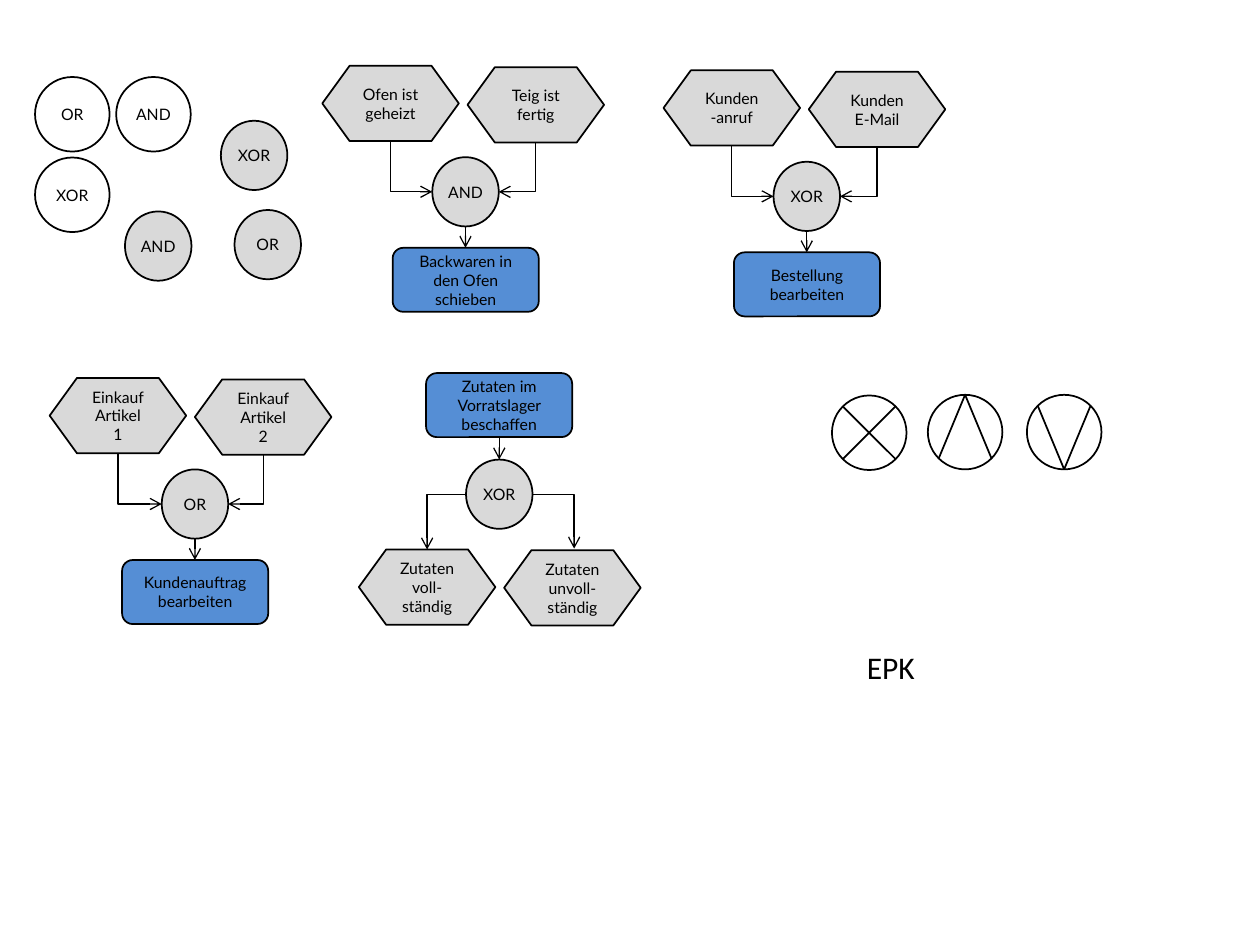
import pptx
import pptx.dml.color
import pptx.enum.shapes
import pptx.enum.text
import pptx.oxml
import pptx.oxml.ns
import pptx.util

Pt = pptx.util.Pt
RGB = pptx.dml.color.RGBColor
KIND = pptx.enum.shapes.MSO_SHAPE
LINK = pptx.enum.shapes.MSO_CONNECTOR
TEXT = pptx.enum.text

BLACK = RGB(0x00, 0x00, 0x00)
WHITE = RGB(0xFF, 0xFF, 0xFF)
GREY = RGB(0xD9, 0xD9, 0xD9)
BLUE = RGB(0x55, 0x8E, 0xD5)

HEX_W, HEX_H = 78, 43
TASK_W, TASK_H = 83.5, 36.6
GATE_W, GATE_H = 38, 39.6
RING = 42.6
ARM = 15.1

LABEL = {"name": "Lato", "size": Pt(9)}
TITLE = {"name": "Calibri", "size": Pt(18)}
PARA = {"alignment": TEXT.PP_ALIGN.CENTER, "space_after": Pt(10)}


def apply(item, form):
    for key, value in form.items():
        setattr(item, key, value)


def write(frame, text, font, para, wrap):
    apply(frame, {"word_wrap": wrap})
    line = frame.paragraphs[0]
    apply(line, para)
    run = line.add_run()
    run.text = text
    apply(run.font, font)
    run.font.color.rgb = BLACK


def node(slide, kind, left, top, width, height, fill, text="", wrap=True):
    shape = slide.shapes.add_shape(kind, Pt(left), Pt(top), Pt(width), Pt(height))
    shape.shadow.inherit = False
    shape.fill.solid()
    shape.fill.fore_color.rgb = fill
    shape.line.color.rgb = BLACK
    shape.line.width = Pt(1)
    if text:
        shape.text_frame.vertical_anchor = TEXT.MSO_ANCHOR.MIDDLE
        write(shape.text_frame, text, LABEL, PARA, wrap)


def event(slide, left, top, text):
    node(slide, KIND.FLOWCHART_PREPARATION, left, top, HEX_W, HEX_H, GREY, text)


def task(slide, left, top, text):
    node(slide, KIND.FLOWCHART_ALTERNATE_PROCESS, left, top, TASK_W, TASK_H, BLUE, text)


def gate(slide, left, top, text):
    node(slide, KIND.FLOWCHART_CONNECTOR, left, top, GATE_W, GATE_H, GREY, text, False)


def ring(slide, left, top, text=""):
    node(slide, KIND.FLOWCHART_CONNECTOR, left, top, RING, RING, WHITE, text, False)


def stroke(slide, start, end, width=1, kind=LINK.STRAIGHT):
    line = slide.shapes.add_connector(kind, *(Pt(n) for n in (*start, *end)))
    line.line.color.rgb = BLACK
    line.line.width = Pt(width)
    props = line._element.spPr
    props.append(pptx.oxml.parse_xml(
        "<a:effectLst %s/>" % pptx.oxml.ns.nsdecls("a")))
    return line


def arrow(slide, start, end, kind=LINK.STRAIGHT):
    line = stroke(slide, start, end, 0.75, kind)
    line.line._get_or_add_ln().append(pptx.oxml.parse_xml(
        '<a:tailEnd type="arrow" %s/>' % pptx.oxml.ns.nsdecls("a")))
    return line


def bend(slide, start, end, down=False):
    (x1, y1), (x2, y2) = start, end
    if down:
        mid_x, mid_y = (x1 + x2) / 2, (y1 + y2) / 2
        half_w, half_h = (y2 - y1) / 2, abs(x2 - x1) / 2
        side = 1 if x2 < x1 else -1
        start = mid_x - side * half_w, mid_y - half_h
        end = mid_x + side * half_w, mid_y + half_h
    line = arrow(slide, start, end, LINK.ELBOW)
    props = line._element.spPr
    props.prstGeom.set("prst", "bentConnector2")
    if down:
        props.xfrm.set("rot", str((90 if x2 < x1 else 270) * 60000))


def join(slide, left, top, first, second, rule, result, shift=0):
    next_x, next_y = left + 83, top + 0.8
    gate_x, gate_y = left + 62.8 + shift, top + 52.2
    task_x, task_y = left + 40.2 + shift, top + 104
    mid_x, mid_y = gate_x + GATE_W / 2, gate_y + GATE_H / 2
    event(slide, left, top, first)
    event(slide, next_x, next_y, second)
    bend(slide, (left + HEX_W / 2, top + HEX_H), (gate_x, mid_y), True)
    bend(slide, (next_x + HEX_W / 2, next_y + HEX_H), (gate_x + GATE_W, mid_y), True)
    gate(slide, gate_x, gate_y, rule)
    task(slide, task_x, task_y, result)
    arrow(slide, (mid_x, gate_y + GATE_H), (mid_x, task_y))


def split(slide, left, top, source, rule, first, second):
    gate_x, gate_y = left + 22.8, top + 49.4
    mid_x, mid_y = gate_x + GATE_W / 2, gate_y + GATE_H / 2
    event_x, event_y = left - 38.4, top + 100.8
    next_x = event_x + 83
    task(slide, left, top, source)
    gate(slide, gate_x, gate_y, rule)
    arrow(slide, (mid_x, top + TASK_H), (mid_x, gate_y))
    event(slide, event_x, event_y, first)
    event(slide, next_x, event_y + 0.4, second)
    bend(slide, (gate_x, mid_y), (event_x + HEX_W / 2, event_y))
    bend(slide, (gate_x + GATE_W, mid_y), (next_x + HEX_W / 2 + 1, event_y - 0.5))


def symbol(slide, left, top, marks):
    ring(slide, left, top)
    mid_x, mid_y = left + RING / 2, top + RING / 2
    for x1, y1, x2, y2 in marks:
        stroke(slide, (mid_x + x1, mid_y + y1), (mid_x + x2, mid_y + y2))


def main():
    deck = pptx.Presentation()
    apply(deck, {"slide_width": Pt(720), "slide_height": Pt(540)})
    slide = deck.slides.add_slide(deck.slide_layouts[6])

    for left, top, text in ((20, 90, "XOR"), (20, 44, "OR"), (66.4, 44, "AND")):
        ring(slide, left, top, text)
    for left, top, text in ((126.2, 69, "XOR"), (71.4, 120.8, "AND"), (134, 120, "OR")):
        gate(slide, left, top, text)

    join(slide, 184.2, 37.6, "Ofen ist geheizt", "Teig ist fertig",
         "AND", "Backwaren in den Ofen schieben")
    join(slide, 379.2, 40.2, "Kunden-anruf", "Kunden E-Mail",
         "XOR", "Bestellung bearbeiten")
    join(slide, 28.4, 216, "Einkauf Artikel 1", "Einkauf Artikel 2",
         "OR", "Kundenauftrag bearbeiten", 1.2)
    split(slide, 243.5, 213.2, "Zutaten im Vorratslager beschaffen", "XOR",
          "Zutaten voll-ständig", "Zutaten unvoll-ständig")

    edge = RING / 2
    symbol(slide, 475.4, 226, ((-ARM, -ARM, ARM, ARM), (-ARM, ARM, ARM, -ARM)))
    symbol(slide, 530.2, 225.6, ((0, -edge, ARM, ARM), (-ARM, ARM, 0, -edge)))
    symbol(slide, 586.8, 225.6, ((ARM, -ARM, 0, edge), (0, edge, -ARM, -ARM)))

    box = slide.shapes.add_textbox(Pt(488.2), Pt(366.5), Pt(42.5), Pt(29))
    box.text_frame.auto_size = TEXT.MSO_AUTO_SIZE.SHAPE_TO_FIT_TEXT
    write(box.text_frame, "EPK", TITLE, {}, False)

    deck.save("out.pptx")


if __name__ == "__main__":
    main()
